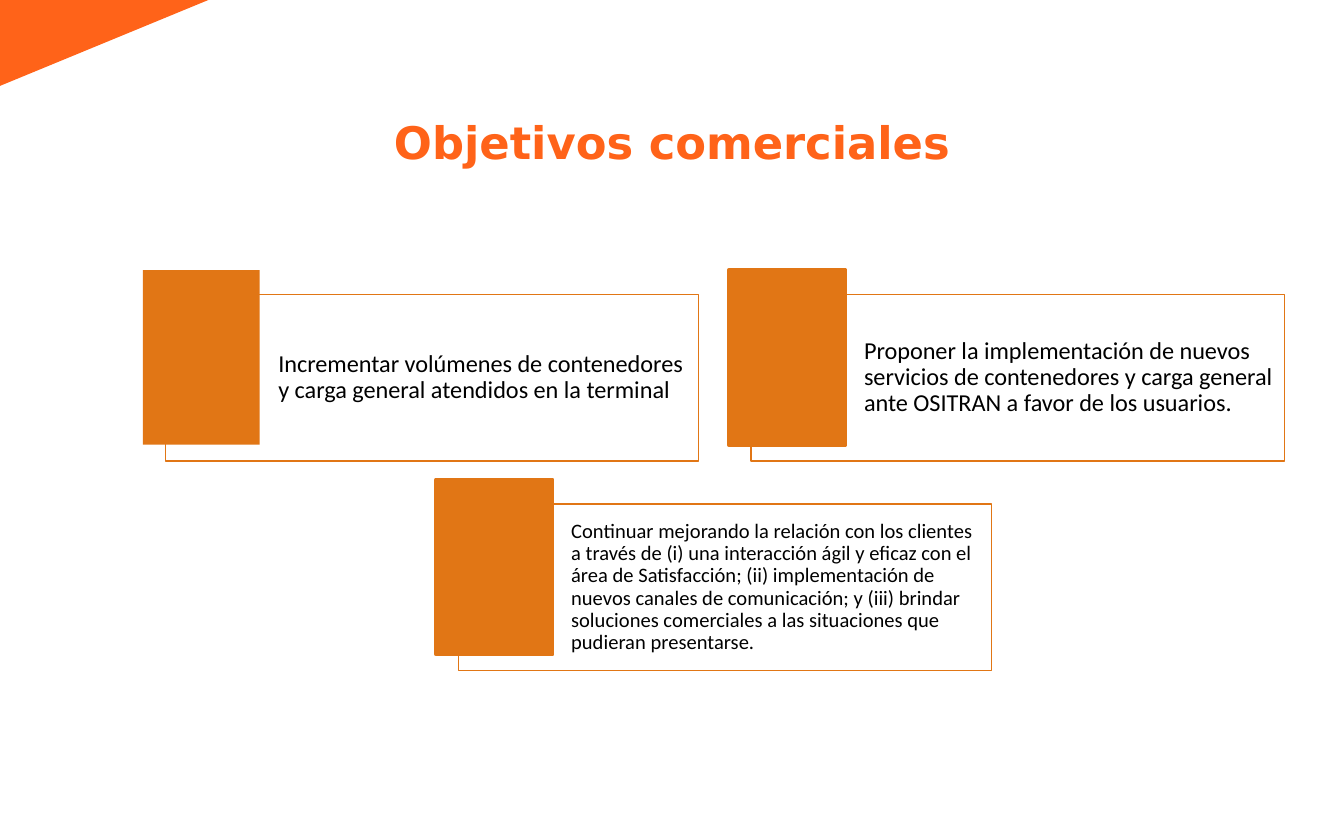
from dataclasses import dataclass

import pptx
import pptx.dml.color
import pptx.enum.shapes
import pptx.enum.text
import pptx.util

Pt = pptx.util.Pt
Shape = pptx.enum.shapes.MSO_SHAPE
Anchor = pptx.enum.text.MSO_ANCHOR
Align = pptx.enum.text.PP_ALIGN


def rgb(value):
    return pptx.dml.color.RGBColor.from_string(value)


@dataclass(frozen=True)
class Theme:
    title_color = rgb("FF6319")
    accent = rgb("E17615")
    panel = rgb("FFFFFF")
    ink = rgb("000000")
    title_font = "DejaVu Sans"
    body_font = "Calibri"
    title_size = 24
    body_size = 13
    small_size = 11


THEME = Theme()
CARD_WIDTH, CARD_HEIGHT = 285.8, 89.3
CARD_LEFT, CARD_TOP = 88.6, 157.7
COLUMN_STEP, ROW_STEP = 313.8, 112.3

# Column, row, accent outline width, type size, text
GOALS = [
    (0, 0, 0, THEME.body_size,
     "Incrementar volúmenes de contenedores y carga general atendidos en la terminal"),
    (1, 0, 2, THEME.body_size,
     "Proponer la implementación de nuevos servicios de contenedores y carga general "
     "ante OSITRAN a favor de los usuarios."),
    (0.5, 1, 2, THEME.small_size,
     "Continuar mejorando la relación con los clientes a través de (i) una interacción "
     "ágil y eficaz con el área de Satisfacción; (ii) implementación de nuevos canales "
     "de comunicación; y (iii) brindar soluciones comerciales a las situaciones que "
     "pudieran presentarse."),
]


def add_filled_shape(page, kind, box, fill, line=None, line_width=0):
    shape = page.shapes.add_shape(kind, *map(Pt, box))
    shape.shadow.inherit = False
    shape.fill.solid()
    shape.fill.fore_color.rgb = fill
    if line_width:
        shape.line.color.rgb = line
        shape.line.width = Pt(line_width)
    else:
        shape.line.fill.background()
    return shape


def set_text(frame, text, font, size, color, align, anchor, margins, bold=False):
    frame.word_wrap = True
    frame.auto_size = pptx.enum.text.MSO_AUTO_SIZE.NONE
    frame.vertical_anchor = anchor
    (frame.margin_left, frame.margin_top,
     frame.margin_right, frame.margin_bottom) = map(Pt, margins)
    frame.text = text
    para = frame.paragraphs[0]
    para.alignment = align
    para.line_spacing = 0.9
    para.space_before = Pt(0)
    para.font.name = font
    para.font.size = Pt(size)
    para.font.bold = bold
    para.font.color.rgb = color


def add_corner(page, left, top, width, height):
    """Fill the top-left corner of the box with a turned right triangle."""
    turned_box = (left + (width - height) / 2, top + (height - width) / 2,
                  height, width)
    triangle = add_filled_shape(page, Shape.RIGHT_TRIANGLE, turned_box,
                                THEME.title_color)
    triangle.rotation = 90


def add_title(page, left, top, width, height):
    title = page.shapes.title
    title.left, title.top, title.width, title.height = map(
        Pt, (left, top, width, height))
    set_text(title.text_frame, "Objetivos comerciales", THEME.title_font,
             THEME.title_size, THEME.title_color, Align.CENTER, Anchor.BOTTOM,
             (0, 0, 0, 0), bold=True)


def add_goal(page, left, top, width, height, text, size, accent_line):
    """Draw a framed text with an accent block over its top-left corner."""
    panel = add_filled_shape(page, Shape.RECTANGLE, (left, top, width, height),
                             THEME.panel, THEME.accent, 0.75)
    set_text(panel.text_frame, text, THEME.body_font, size, THEME.ink,
             Align.LEFT, Anchor.MIDDLE, (60.5, 3.6, 3.6, 3.6))
    add_filled_shape(page, Shape.RECTANGLE, (left - 12, top - 13, 62.6, 93.6),
                     THEME.accent, THEME.accent, accent_line)


def main():
    deck = pptx.Presentation()
    deck.slide_width, deck.slide_height = Pt(720), Pt(450)
    page = deck.slides.add_slide(deck.slide_layouts.get_by_name("Title Only"))
    add_corner(page, 0, 0, 111.6, 46)
    add_title(page, 54, 31, 612, 59.8)
    for column, row, accent_line, size, text in GOALS:
        add_goal(page, CARD_LEFT + column * COLUMN_STEP, CARD_TOP + row * ROW_STEP,
                 CARD_WIDTH, CARD_HEIGHT, text, size, accent_line)
    deck.save("out.pptx")


if __name__ == "__main__":
    main()
